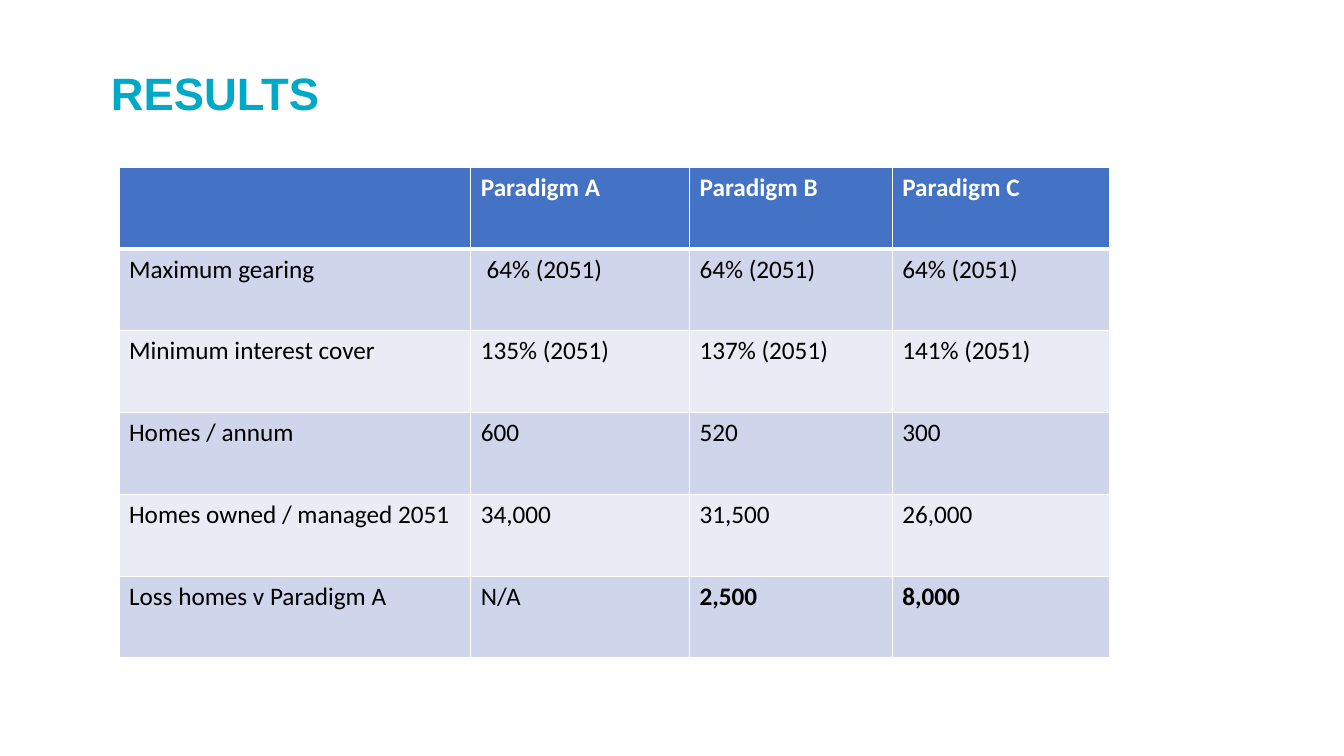
from lxml.etree import SubElement
from pptx import Presentation
from pptx.dml.color import RGBColor
from pptx.enum.text import MSO_ANCHOR, PP_ALIGN
from pptx.oxml.ns import qn
from pptx.util import Inches, Pt

TITLE = "RESULTS"
ROWS = [
    ("", "Paradigm A", "Paradigm B", "Paradigm C"),
    ("Maximum gearing", " 64% (2051)", "64% (2051)", "64% (2051)"),
    ("Minimum interest cover", "135% (2051)", "137% (2051)", "141% (2051)"),
    ("Homes / annum", "600", "520", "300"),
    ("Homes owned / managed 2051", "34,000", "31,500", "26,000"),
    ("Loss homes v Paradigm A", "N/A", "2,500", "8,000"),
]
BOLD = {"2,500", "8,000"}
WIDTHS = (3.49, 2.17, 2.01, 2.16)
HEIGHT = 4.87
COLORS = {"title": "00A9C5", "head": "4472C4", "odd": "CFD5EA",
          "even": "E9EBF5", "white": "FFFFFF", "black": "000000"}


def color(name):
    return RGBColor.from_string(COLORS[name])


def style(font, tint, **values):
    for key, value in values.items():
        setattr(font, key, value)
    font.color.rgb = color(tint)


def border(cell, widths):
    """Draw white cell edges; widths maps the sides L, R, T, B to points."""
    props = cell._tc.get_or_add_tcPr()
    for side, width in widths.items():
        line = SubElement(props, qn(f"a:ln{side}"), w=str(Pt(width)))
        fill = SubElement(line, qn("a:solidFill"))
        SubElement(fill, qn("a:srgbClr"), val=COLORS["white"])


def add_title(slide):
    title = slide.shapes.title
    place = {"left": 1, "top": 0.68, "width": 10, "height": 0.54}
    for key, value in place.items():
        setattr(title, key, Inches(value))
    frame = title.text_frame
    frame.text = TITLE
    frame.word_wrap = True
    frame.vertical_anchor = MSO_ANCHOR.MIDDLE
    para = frame.paragraphs[0]
    para.alignment = PP_ALIGN.LEFT
    para.line_spacing = 0.9
    style(para.runs[0].font, "title", name="Arial", size=Pt(32.4), bold=True)


def add_results(slide):
    table = slide.shapes.add_table(
        len(ROWS), len(WIDTHS), Inches(1.18), Inches(1.66),
        Inches(sum(WIDTHS)), Inches(HEIGHT)).table
    for col, width in zip(table.columns, WIDTHS):
        col.width = Inches(width)
    for r, texts in enumerate(ROWS):
        head = r == 0
        band = "head" if head else "odd" if r % 2 else "even"
        edges = {"L": 1, "R": 1, "T": 3 if r == 1 else 1, "B": 3 if head else 1}
        for c, text in enumerate(texts):
            cell = table.cell(r, c)
            border(cell, edges)
            cell.fill.solid()
            cell.fill.fore_color.rgb = color(band)
            cell.text = text
            style(cell.text_frame.paragraphs[0].font,
                  "white" if head else "black", name="Calibri",
                  size=Pt(18), bold=head or text in BOLD)


def main():
    deck = Presentation()
    deck.slide_width, deck.slide_height = Inches(13.33), Inches(7.5)
    slide = deck.slides.add_slide(deck.slide_layouts[5])
    add_title(slide)
    add_results(slide)
    deck.save("out.pptx")


if __name__ == "__main__":
    main()
